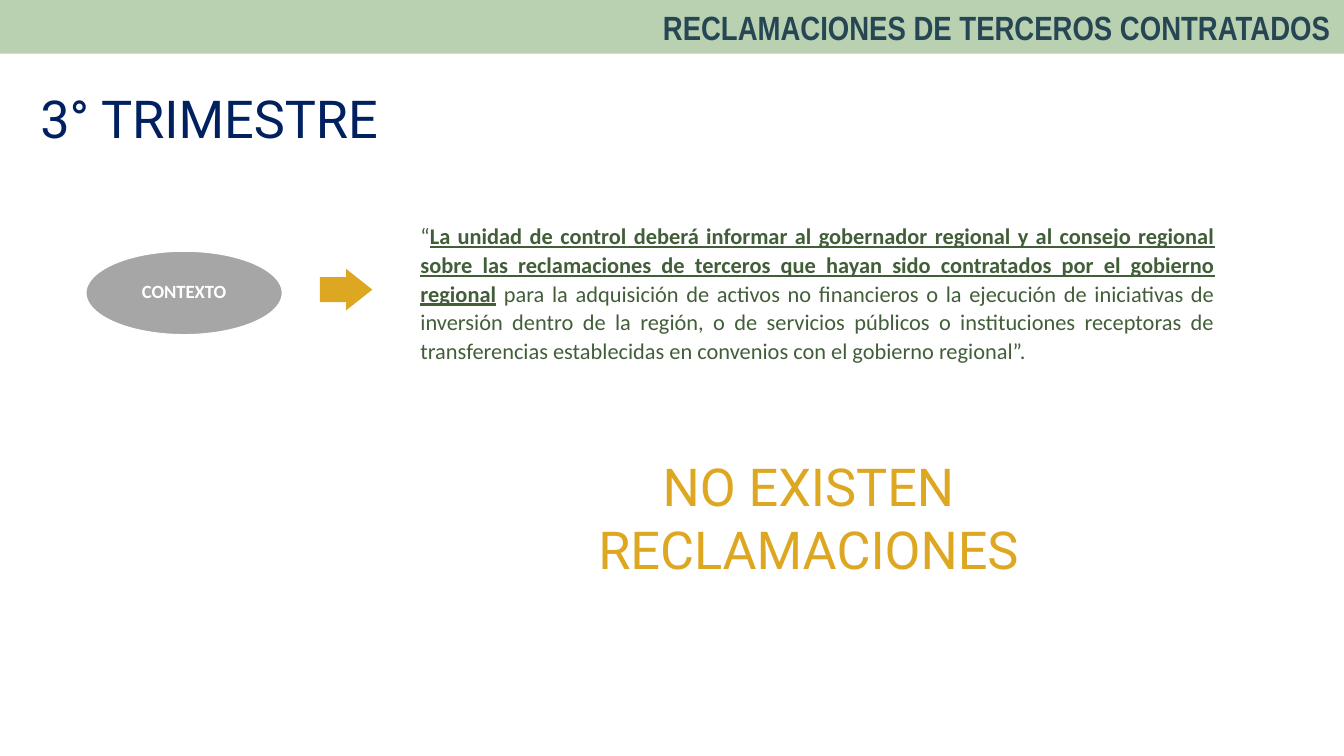
from dataclasses import dataclass

from pptx import Presentation
from pptx.dml.color import RGBColor
from pptx.enum.shapes import MSO_SHAPE as Preset
from pptx.enum.text import MSO_ANCHOR as Anchor, PP_ALIGN as Align
from pptx.util import Inches, Pt


@dataclass(frozen=True)
class Theme:
    band: str = "B9D0B1"
    band_text: str = "264653"
    navy: str = "002060"
    gold: str = "DEA721"
    gray: str = "A6A6A6"
    green: str = "425E39"
    white: str = "FFFFFF"
    band_font: str = "Arial Narrow"
    body_font: str = "Calibri"
    display_font: str = "Roboto"
    band_size: int = 18
    display_size: int = 28
    body_size: int = 12
    label_size: int = 10


THEME = Theme()

QUOTE = (
    ("“", False, False),
    ("La unidad de control deberá informar al gobernador regional y al "
     "consejo regional sobre las reclamaciones de terceros que hayan sido "
     "contratados por el gobierno regional", True, True),
    (" ", True, False),
    ("para la adquisición de activos no financieros o la ejecución de "
     "iniciativas de inversión dentro de la región, o de servicios públicos "
     "o instituciones receptoras de transferencias establecidas en convenios "
     "con el gobierno regional”.", False, False),
)


def style_font(font, name, size, color, bold=False):
    font.name = name
    font.size = Pt(size)
    font.bold = bold
    font.color.rgb = RGBColor.from_string(color)


def add_preset(slide, preset, box, fill):
    """Add a flat, filled shape without outline or shadow."""
    shape = slide.shapes.add_shape(preset, *map(Inches, box))
    shape.shadow.inherit = False
    shape.fill.solid()
    shape.fill.fore_color.rgb = RGBColor.from_string(fill)
    shape.line.fill.background()
    return shape


def write_line(shape, text, align, *font_style, **options):
    paragraph = shape.text_frame.paragraphs[0]
    paragraph.text = text
    paragraph.alignment = align
    style_font(paragraph.runs[0].font, *font_style, **options)
    return paragraph


def add_text_area(slide, box):
    area = slide.shapes.add_textbox(*map(Inches, box))
    area.text_frame.word_wrap = True
    return area


def add_title_band(slide, box, text):
    band = add_preset(slide, Preset.RECTANGLE, box, THEME.band)
    band.text_frame.vertical_anchor = Anchor.MIDDLE
    write_line(band, text, Align.RIGHT, THEME.band_font, THEME.band_size,
               THEME.band_text, bold=True)


def add_headline(slide, box, text, color):
    write_line(add_text_area(slide, box), text, Align.CENTER,
               THEME.display_font, THEME.display_size, color)


def add_context(slide, box):
    """Place the context label, its arrow and the quoted rule in the box."""
    left, top, width, height = box

    arrow = add_preset(slide, Preset.RIGHT_ARROW,
                       (left + 1.75, top + 0.41, 0.39, 0.31), THEME.gold)
    arrow.adjustments[0] = 0.6
    arrow.adjustments[1] = 0.63

    label = add_preset(slide, Preset.OVAL, (left, top + 0.27, 1.48, 0.64), THEME.gray)
    label.line.color.rgb = RGBColor.from_string(THEME.white)
    label.line.width = Pt(2)
    label.text_frame.vertical_anchor = Anchor.MIDDLE
    label_text = write_line(label, "CONTEXTO", Align.CENTER, THEME.body_font,
                            THEME.label_size, THEME.white, bold=True)
    label_text.line_spacing = 0.9

    quote_offset = 2.4
    quote = add_text_area(slide, (left + quote_offset, top, width - quote_offset, height))
    paragraph = quote.text_frame.paragraphs[0]
    paragraph.alignment = Align.JUSTIFY
    paragraph.line_spacing = 1.07
    for text, bold, underline in QUOTE:
        run = paragraph.add_run()
        run.text = text
        style_font(run.font, THEME.body_font, THEME.body_size, THEME.green, bold)
        run.font.underline = underline


def main():
    deck = Presentation()
    deck.slide_width = Inches(10)
    deck.slide_height = deck.slide_width * 9 // 16
    slide = deck.slides.add_slide(deck.slide_layouts[6])

    add_title_band(slide, (0, 0, 10, 0.4), "RECLAMACIONES DE TERCEROS CONTRATADOS")
    add_headline(slide, (-0.08, 0.59, 3.27, 0.57), "3° TRIMESTRE", THEME.navy)
    add_context(slide, (0.63, 1.59, 8.51, 1.38))
    add_headline(slide, (4, 3.33, 4.03, 1.04), "NO EXISTEN RECLAMACIONES", THEME.gold)

    deck.save("out.pptx")


if __name__ == "__main__":
    main()
